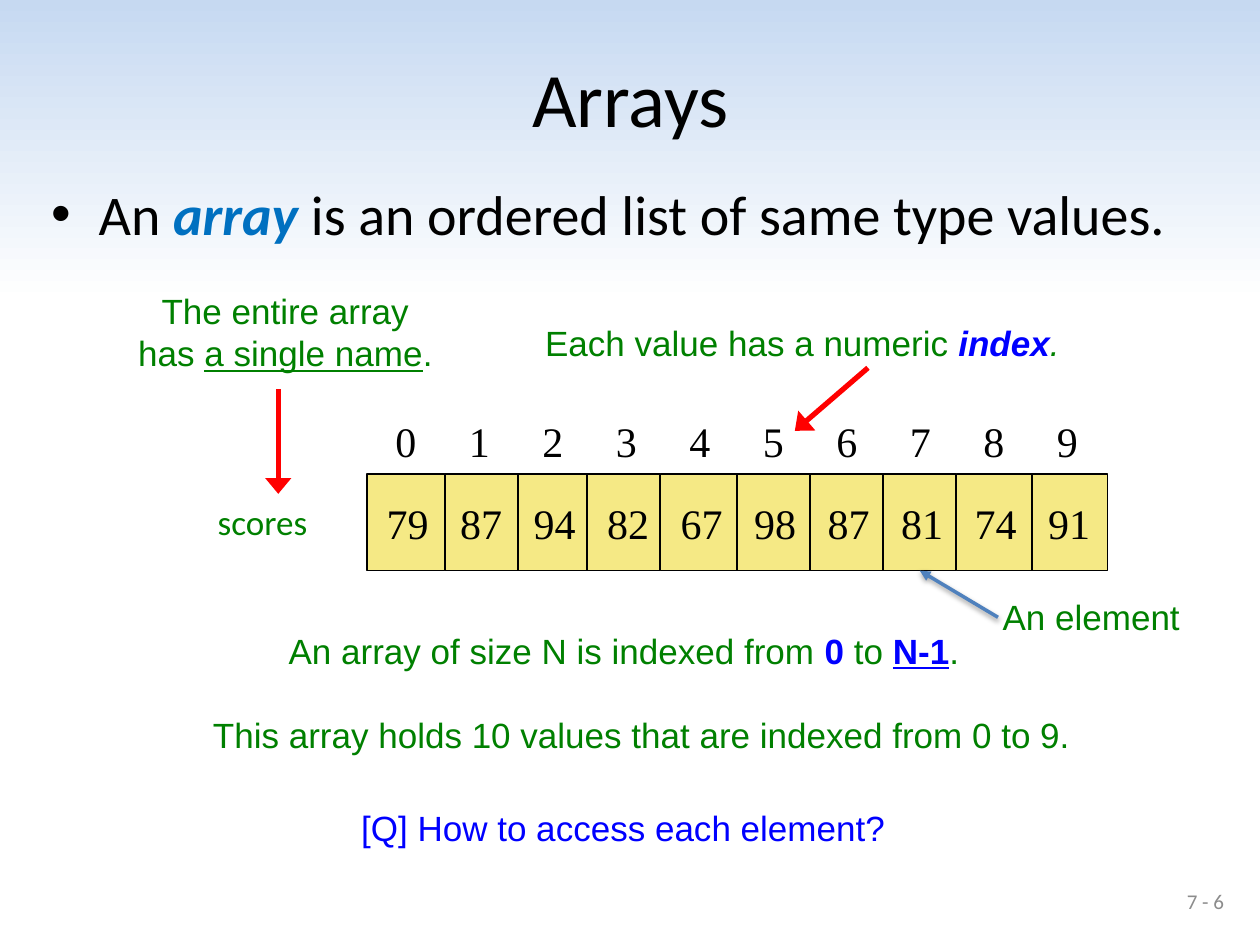
from lxml import etree
from pptx import Presentation
from pptx.dml.color import RGBColor
from pptx.enum.shapes import MSO_CONNECTOR, MSO_SHAPE
from pptx.enum.text import MSO_ANCHOR, PP_ALIGN
from pptx.oxml.ns import qn
from pptx.util import Pt

COLORS = {
    "sky": "C6D9F1", "white": "FFFFFF", "black": "000000", "term": "0070C0",
    "cell": "F5E985", "green": "008000", "blue": "0000FF", "red": "FF0000",
    "steel": "4F81BD", "gray": "8C8C8C",
}
SCORES = [79, 87, 94, 82, 67, 98, 87, 81, 74, 91]


def rgb(name):
    return RGBColor.from_string(COLORS[name])


def add_text(s, box, lines, size=20, font="Arial", color="green",
             align=PP_ALIGN.CENTER, anchor=MSO_ANCHOR.TOP, wrap=False):
    tf = s.shapes.add_textbox(*map(Pt, box)).text_frame
    tf.word_wrap = wrap
    tf.vertical_anchor = anchor
    for i, line in enumerate(lines):
        p = tf.paragraphs[0] if i == 0 else tf.add_paragraph()
        p.alignment = align
        p.font.size, p.font.name = Pt(size), font
        p.font.color.rgb = rgb(color)
        for text, style in line:
            r = p.add_run()
            r.text = text
            r.font.bold = style.get("bold")
            r.font.italic = style.get("italic")
            r.font.underline = style.get("underline")
            if "color" in style:
                r.font.color.rgb = rgb(style["color"])
    return tf


def add_line(s, start, end, color, width):
    cx = s.shapes.add_connector(MSO_CONNECTOR.STRAIGHT, *map(Pt, start + end))
    cx.line.color.rgb = rgb(color)
    cx.line.width = Pt(width)
    effects = etree.SubElement(cx._element.spPr, qn("a:effectLst"))
    return cx, effects


def add_arrow(s, start, end, color, width, head="lg"):
    cx, effects = add_line(s, start, end, color, width)
    etree.SubElement(cx.line._get_or_add_ln(), qn("a:tailEnd"),
                     type="triangle", w=head, len="med")
    return cx, effects


def add_background(s):
    fill = s.background.fill
    fill.gradient()
    fill.gradient_angle = 90
    for stop, (position, color) in zip(fill.gradient_stops,
                                       [(0.68, "white"), (1, "sky")]):
        stop.position = position
        stop.color.rgb = rgb(color)


def add_title(s, box):
    add_text(s, box, [[("Arrays", {})]], 44, "Calibri", "black",
             anchor=MSO_ANCHOR.MIDDLE, wrap=True)


def add_definition(s, box):
    term = {"bold": True, "italic": True, "color": "term"}
    tf = add_text(s, box, [[("An ", {}), ("array", term),
                            (" is an ordered list of same type values.", {})]],
                  32, "Calibri", "black", PP_ALIGN.LEFT, wrap=True)
    p = tf.paragraphs[0]
    p.space_before = Pt(6.4)
    pPr = p._p.get_or_add_pPr()
    pPr.set("marL", str(Pt(27)))
    pPr.set("indent", str(-Pt(27)))
    bullet = etree.Element(qn("a:buChar"), char="•")
    font = etree.Element(qn("a:buFont"), typeface="Arial")
    pPr.find(qn("a:spcBef")).addnext(font)
    font.addnext(bullet)


def add_number_row(s, box, numbers, pitch=42):
    line = "\t".join(map(str, numbers))
    tf = add_text(s, box, [[(line, {})]], 24, "Times New Roman", "black",
                  PP_ALIGN.LEFT, wrap=True)
    pPr = tf.paragraphs[0]._p.get_or_add_pPr()
    tabs = etree.Element(qn("a:tabLst"))
    for i in range(1, len(numbers)):
        etree.SubElement(tabs, qn("a:tab"), pos=str(Pt(i * pitch)), algn="l")
    pPr.find(qn("a:defRPr")).addprevious(tabs)


def add_cell(s, box):
    sp = s.shapes.add_shape(MSO_SHAPE.RECTANGLE, *map(Pt, box))
    sp.shadow.inherit = False
    sp.fill.solid()
    sp.fill.fore_color.rgb = rgb("cell")
    sp.line.color.rgb = rgb("black")
    sp.line.width = Pt(1)
    return sp


def add_array(s, box):
    left, top, width, height = box
    add_number_row(s, (left + 9.4, top - 36.7, 420, 36), range(len(SCORES)))
    add_cell(s, box)
    cells = [add_cell(s, (left + x, top, 41.8, height))
             for x in (44.6, 126, 211.7, 295.2)]
    divider = left + 380.2
    add_line(s, (divider, top), (divider, top + height), "black", 1)
    add_number_row(s, (left + 4.3, top + 10.1, 430, 36), SCORES)
    return cells


def add_name_note(s, box):
    left, top, width, height = box
    add_text(s, (left, top, width, 55.5),
             [[("The entire array", {})],
              [("has ", {}), ("a single name", {"underline": True}), (".", {})]])
    x = left + 89.2
    add_arrow(s, (x, top + 60.5), (x, top + 120.2), "red", 3)
    add_text(s, (left + 47.5, top + height - 31, 86.5, 31), [[("scores", {})]],
             font="Calibri", align=PP_ALIGN.LEFT)


def add_index_note(s, box):
    left, top, width, height = box
    add_text(s, (left, top, width, 31),
             [[("Each value has a numeric ", {}),
               ("index", {"bold": True, "italic": True, "color": "blue"}),
               (".", {"italic": True})]])
    add_arrow(s, (left + 196, top + 30.2), (left + 154.2, top + height), "red", 3)


def add_element_note(s, box, cell):
    left, top, width, height = box
    add_text(s, box, [[("An element", {})]], wrap=True)
    start = (left + 18, top + height / 2)
    cx, effects = add_arrow(s, start, start, "steel", 2, "med")
    cx.end_connect(cell, 2)
    shadow = etree.SubElement(effects, qn("a:outerShdw"), blurRad=str(Pt(3.1)),
                              dist=str(Pt(1.6)), dir="5400000", rotWithShape="0")
    color = etree.SubElement(shadow, qn("a:srgbClr"), val=COLORS["black"])
    etree.SubElement(color, qn("a:alpha"), val="38000")


def add_size_notes(s):
    add_text(s, (156.2, 355.9, 400.5, 31.5),
             [[("An array of size N is indexed from ", {}),
               ("0 ", {"bold": True, "color": "blue"}), ("to ", {}),
               ("N-1", {"bold": True, "underline": True, "color": "blue"}),
               (".", {})]])
    add_text(s, (113, 404, 507.5, 31.5),
             [[("This array holds 10 values that are indexed from 0 to 9.", {})]])
    add_text(s, (198.2, 457.4, 316, 31.5),
             [[("[Q] How to access each element?", {})]], color="blue")


def add_page_number(s, box):
    add_text(s, box, [[("7 - 6", {})]], 12, "Calibri", "gray",
             PP_ALIGN.RIGHT, MSO_ANCHOR.MIDDLE, True)


def main():
    prs = Presentation()
    prs.slide_width, prs.slide_height = Pt(720), Pt(540)
    s = prs.slides.add_slide(prs.slide_layouts[6])
    add_background(s)
    add_title(s, (13.5, 21.5, 693.5, 67.5))
    add_definition(s, (22.3, 98.8, 684.5, 402))
    cells = add_array(s, (209.5, 270.7, 423.4, 55.4))
    add_size_notes(s)
    add_name_note(s, (69.8, 162, 186.5, 151.4))
    add_index_note(s, (300, 180, 317, 66.2))
    add_page_number(s, (538.5, 500.5, 168, 29))
    add_element_note(s, (552.3, 337, 142.5, 31.5), cells[-1])
    prs.save("out.pptx")


if __name__ == "__main__":
    main()
